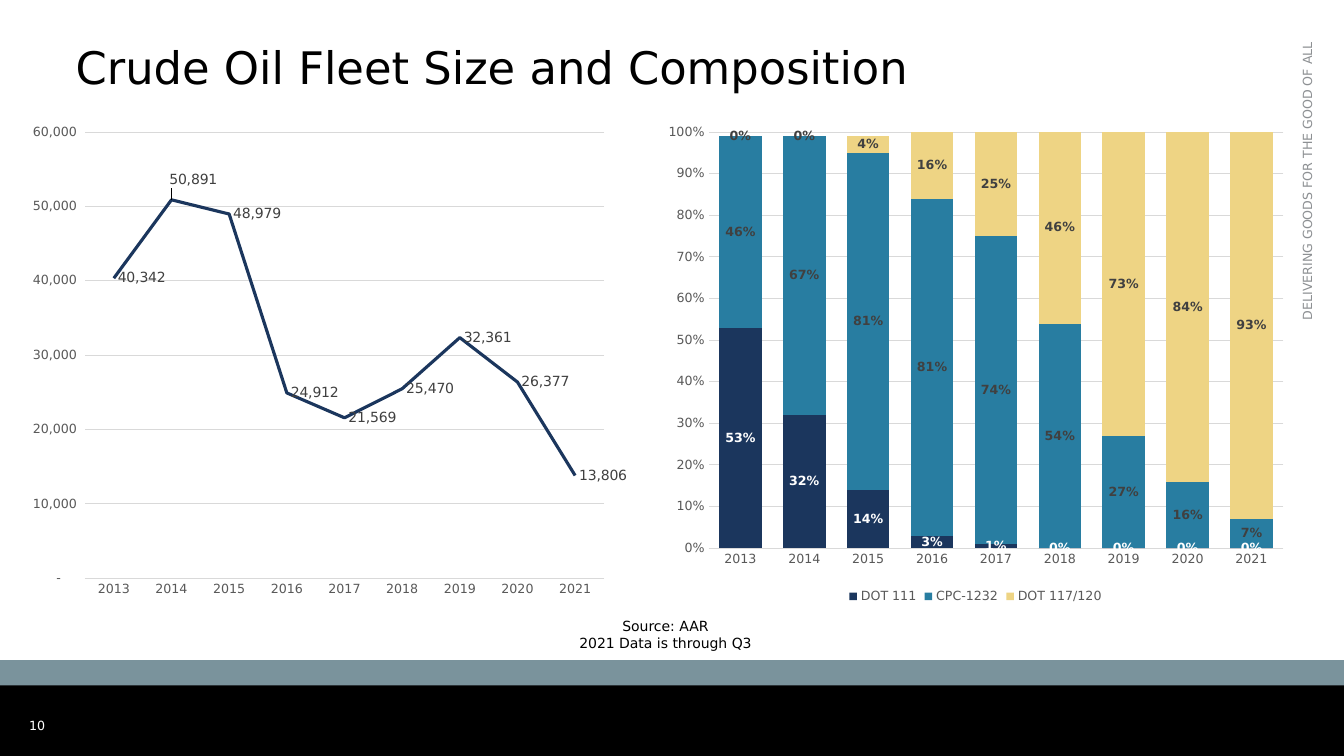
"""Build the crude oil fleet size and composition slide."""
from dataclasses import dataclass

from lxml import etree
from pptx import Presentation
from pptx.chart.chart import Chart
from pptx.chart.data import CategoryChartData
from pptx.dml.color import RGBColor
from pptx.enum.chart import (XL_CHART_TYPE, XL_LABEL_POSITION,
                             XL_LEGEND_POSITION, XL_TICK_MARK)
from pptx.enum.shapes import MSO_SHAPE
from pptx.enum.text import MSO_ANCHOR, PP_ALIGN
from pptx.oxml.ns import qn
from pptx.slide import Slide
from pptx.text.text import Font
from pptx.util import Inches, Pt

LINE, STACKED = XL_CHART_TYPE.LINE, XL_CHART_TYPE.COLUMN_STACKED
RIGHT_OF_POINT, CENTER_OF_BAR = XL_LABEL_POSITION.RIGHT, XL_LABEL_POSITION.CENTER
LEGEND_BOTTOM = XL_LEGEND_POSITION.BOTTOM
NO_TICK = XL_TICK_MARK.NONE
RECTANGLE = MSO_SHAPE.RECTANGLE
TOP, MIDDLE = MSO_ANCHOR.TOP, MSO_ANCHOR.MIDDLE
LEFT, CENTER, RIGHT = PP_ALIGN.LEFT, PP_ALIGN.CENTER, PP_ALIGN.RIGHT

FONT = "DejaVu Sans"
BLACK = RGBColor(0x00, 0x00, 0x00)
WHITE = RGBColor(0xFF, 0xFF, 0xFF)
SLATE = RGBColor(0x7A, 0x93, 0x9C)
MOTTO_GRAY = RGBColor(0x8D, 0x90, 0x93)
AXIS_GRAY = RGBColor(0x59, 0x59, 0x59)
GRID_GRAY = RGBColor(0xD9, 0xD9, 0xD9)
LABEL_GRAY = RGBColor(0x40, 0x40, 0x40)
NAVY = RGBColor(0x1B, 0x36, 0x5D)
TEAL = RGBColor(0x28, 0x7D, 0xA1)
SAND = RGBColor(0xEE, 0xD4, 0x84)

YEARS = [str(year) for year in range(2013, 2022)]
ACCOUNTING = r'_(* #,##0_);_(* \(#,##0\);_(* "-"??_);_('
Area = tuple[float, float, float, float]


@dataclass
class Label:
    """A block of text on the slide."""
    text: str
    area: Area
    size: int
    color: RGBColor
    align: PP_ALIGN = LEFT
    anchor: MSO_ANCHOR = TOP
    direction: str = "horz"


@dataclass
class Band:
    """A filled footer band."""
    area: Area
    color: RGBColor


@dataclass
class Measure:
    """One chart series and its label colour."""
    name: str
    values: list[float]
    color: RGBColor
    label_color: RGBColor = LABEL_GRAY


@dataclass
class Plot:
    """One chart, with its plot area as fractions of the chart."""
    kind: XL_CHART_TYPE
    area: Area
    inner: Area
    measures: list[Measure]
    axis_format: str
    label_format: str
    maximum: float
    step: float
    label_size: int


BANDS = [Band((0, 6.78, 13.33, 0.72), BLACK), Band((0, 6.55, 13.33, 0.25), SLATE)]
LABELS = [
    Label("DELIVERING GOODS FOR THE GOOD OF ALL", (12.84, 0.32, 0.35, 3.31), 9,
          MOTTO_GRAY, RIGHT, direction="vert270"),
    Label("10", (0.19, 6.93, 0.58, 0.54), 9, WHITE, anchor=MIDDLE),
    Label("Source: AAR\n2021 Data is through Q3", (5.27, 6.08, 2.66, 0.44), 10,
          BLACK, CENTER),
]
FLEET_SIZE = Plot(
    LINE, (0.19, 1.15, 6.1, 4.88), (0.107, 0.033, 0.844, 0.907),
    [Measure("Series 1", [40342, 50891, 48979, 24912, 21569, 25470, 32361, 26377,
                          13806], NAVY)],
    ACCOUNTING, "#,##0", 60000, 10000, 10)
COMPOSITION = Plot(
    STACKED, (6.5, 1.15, 6.35, 4.88), (0.083, 0.033, 0.898, 0.846),
    [Measure("DOT 111", [0.53, 0.32, 0.14, 0.03, 0.01, 0, 0, 0, 0], NAVY, WHITE),
     Measure("CPC-1232", [0.46, 0.67, 0.81, 0.81, 0.74, 0.54, 0.27, 0.16, 0.07], TEAL),
     Measure("DOT 117/120", [0, 0, 0.04, 0.16, 0.25, 0.46, 0.73, 0.84, 0.93], SAND)],
    "0%", "0%", 1, 0.1, 9)


def style_font(font: Font, size: int, color: RGBColor, bold: bool = False) -> None:
    """Apply the slide font."""
    font.name, font.size, font.bold = FONT, Pt(size), bold
    font.color.rgb = color


def add_band(slide: Slide, band: Band) -> None:
    """Draw a footer band."""
    shape = slide.shapes.add_shape(RECTANGLE, *map(Inches, band.area))
    shape.shadow.inherit = False
    shape.fill.solid()
    shape.fill.fore_color.rgb = band.color
    shape.line.fill.background()


def add_label(slide: Slide, label: Label) -> None:
    """Draw a text box."""
    box = slide.shapes.add_textbox(*map(Inches, label.area))
    frame = box.text_frame
    frame.text = label.text
    frame.word_wrap = True
    frame.vertical_anchor = label.anchor
    box.element.txBody.find(qn("a:bodyPr")).set("vert", label.direction)
    for para in frame.paragraphs:
        para.alignment = label.align
        for span in para.runs:
            style_font(span.font, label.size, label.color)


def add_layout(parent: etree.ElementBase, index: int, settings: dict[str, object]) -> None:
    """Insert a manual chart layout into an element."""
    for old in parent.findall(qn("c:layout")):
        parent.remove(old)
    layout = etree.Element(qn("c:layout"))
    manual = etree.SubElement(layout, qn("c:manualLayout"))
    for name, value in settings.items():
        etree.SubElement(manual, qn(f"c:{name}")).set("val", str(value))
    parent.insert(index, layout)


def style_axes(chart: Chart, plot: Plot) -> None:
    """Format both axes and the gridlines."""
    for axis in (chart.category_axis, chart.value_axis):
        axis.major_tick_mark = axis.minor_tick_mark = NO_TICK
        style_font(axis.tick_labels.font, 9, AXIS_GRAY)
    scale = chart.value_axis
    scale.minimum_scale, scale.maximum_scale = 0, plot.maximum
    scale.major_unit = plot.step
    scale.tick_labels.number_format = plot.axis_format
    scale.tick_labels.number_format_is_linked = False
    scale.format.line.fill.background()
    for line in (chart.category_axis.format.line, scale.major_gridlines.format.line):
        line.color.rgb = GRID_GRAY
        line.width = Pt(0.75)


def add_plot(slide: Slide, plot: Plot) -> Chart:
    """Draw a chart with labelled series."""
    data = CategoryChartData(number_format=plot.label_format)
    data.categories = YEARS
    for measure in plot.measures:
        data.add_series(measure.name, measure.values)
    chart = slide.shapes.add_chart(plot.kind, *map(Inches, plot.area), data).chart
    style_font(chart.font, 10, BLACK)
    chart.has_title = chart.has_legend = False
    style_axes(chart, plot)
    is_line = plot.kind == LINE
    chart.plots[0].vary_by_categories = False
    for series, measure in zip(chart.plots[0].series, plot.measures):
        if is_line:
            series.smooth = False
            series.format.line.color.rgb = measure.color
            series.format.line.width = Pt(2.25)
        else:
            series.format.fill.solid()
            series.format.fill.fore_color.rgb = measure.color
        labels = series.data_labels
        labels.show_value = True
        labels.number_format = plot.label_format
        labels.number_format_is_linked = False
        labels.position = RIGHT_OF_POINT if is_line else CENTER_OF_BAR
        style_font(labels.font, plot.label_size, measure.label_color, not is_line)
    placement = dict(zip("xywh", plot.inner))
    add_layout(chart.element.find(f".//{qn('c:plotArea')}"), 0,
               {"layoutTarget": "inner", "xMode": "edge", "yMode": "edge", **placement})
    return chart


def main() -> None:
    """Build and save the deck."""
    deck = Presentation()
    deck.slide_width, deck.slide_height = Inches(13.33), Inches(7.5)
    slide = deck.slides.add_slide(deck.slide_layouts[5])
    title = slide.shapes.title
    title.left, title.top, title.width, title.height = map(Inches, (0.65, 0.4, 11.92, 1.02))
    title.text_frame.text = "Crude Oil Fleet Size and Composition"
    title.text_frame.vertical_anchor = TOP
    para = title.text_frame.paragraphs[0]
    para.alignment, para.line_spacing = LEFT, 0.9
    style_font(para.runs[0].font, 32, BLACK)
    for band in BANDS:
        add_band(slide, band)
    fleet = add_plot(slide, FLEET_SIZE)
    peak = fleet.plots[0].series[0].points[1].data_label
    peak.position = RIGHT_OF_POINT
    style_font(peak.font, FLEET_SIZE.label_size, LABEL_GRAY)
    add_layout(fleet.element.find(f".//{qn('c:dLbl')}"), 1, {"x": -0.01, "y": -0.04})
    composition = add_plot(slide, COMPOSITION)
    composition.plots[0].gap_width, composition.plots[0].overlap = 50, 100
    composition.has_legend = True
    composition.legend.position = LEGEND_BOTTOM
    composition.legend.include_in_layout = False
    style_font(composition.legend.font, 9, AXIS_GRAY)
    for label in LABELS:
        add_label(slide, label)
    deck.save("out.pptx")


if __name__ == "__main__":
    main()
